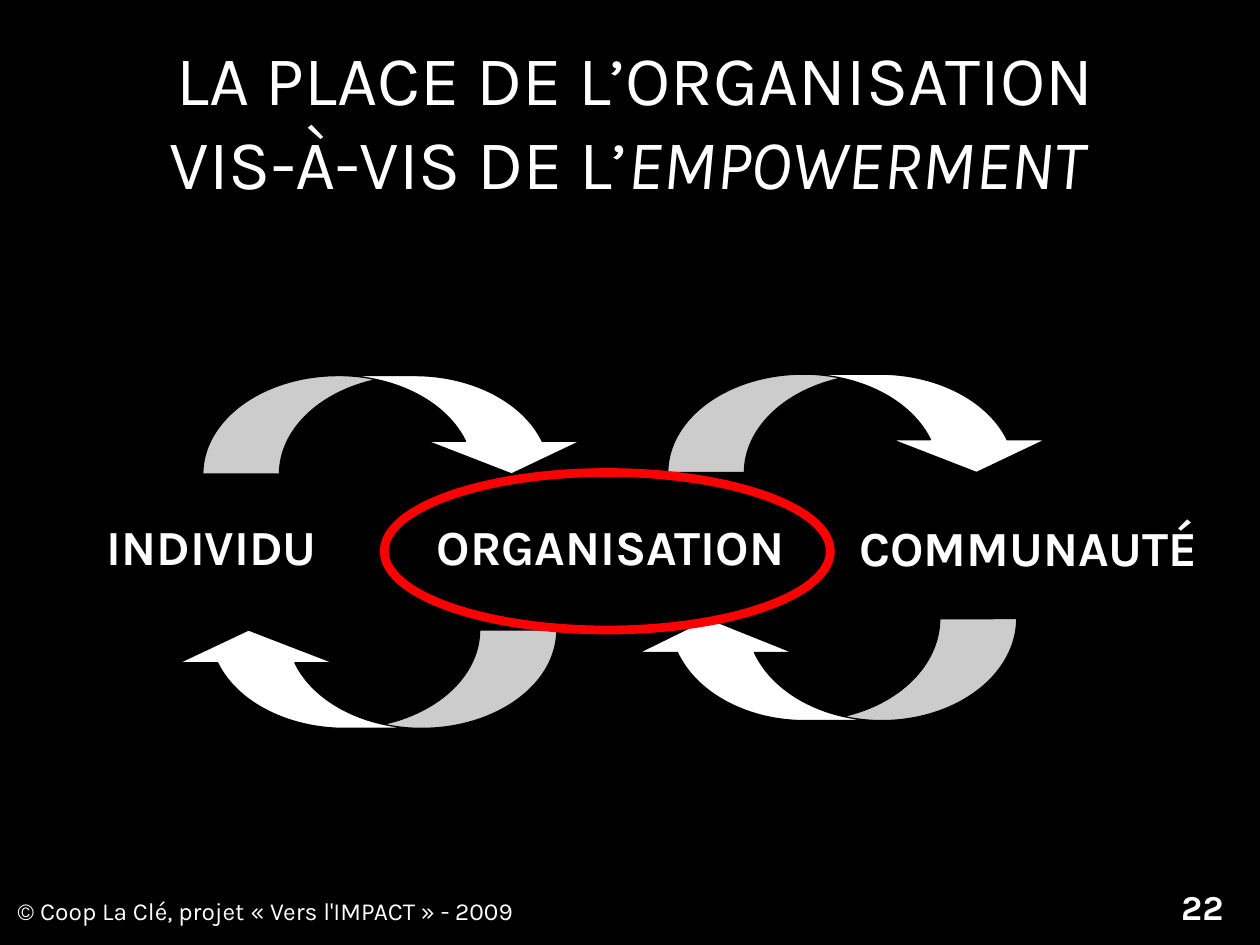
import pptx
import pptx.util
import pptx.dml.color
import pptx.enum.shapes
import pptx.enum.text

Pt = pptx.util.Pt
RGBColor = pptx.dml.color.RGBColor
Shape = pptx.enum.shapes.MSO_SHAPE
Align = pptx.enum.text.PP_ALIGN
Anchor = pptx.enum.text.MSO_ANCHOR
AutoSize = pptx.enum.text.MSO_AUTO_SIZE

BLACK = RGBColor(0x00, 0x00, 0x00)
WHITE = RGBColor(0xFF, 0xFF, 0xFF)
RED = RGBColor(0xFF, 0x00, 0x00)
TITLE_ONLY = 5


class SlideBuilder:
    """Holds the style and the current slide; lengths are in points."""

    font_name = "Karla"

    def __init__(self, deck):
        self.page = deck.slides.add_slide(deck.slide_layouts[TITLE_ONLY])
        fill = self.page.background.fill
        fill.solid()
        fill.fore_color.rgb = BLACK

    def style(self, para, size, align, bold=False):
        para.alignment = align
        para.font.name = self.font_name
        para.font.size = Pt(size)
        para.font.bold = bold
        para.font.color.rgb = WHITE

    def title(self, left, top, width, height, spans):
        box = self.page.shapes.title
        box.left, box.top, box.width, box.height = map(Pt, (left, top, width, height))
        frame = box.text_frame
        frame.auto_size = AutoSize.NONE
        frame.vertical_anchor = Anchor.MIDDLE
        para = frame.paragraphs[0]
        for text, italic in spans:
            span = para.add_run()
            span.text = text
            span.font.italic = italic
        self.style(para, 40, Align.CENTER)

    def text(self, left, top, width, height, text, size, align, bold=False):
        box = self.page.shapes.add_textbox(*map(Pt, (left, top, width, height)))
        frame = box.text_frame
        frame.word_wrap = True
        frame.text = text
        self.style(frame.paragraphs[0], size, align, bold)

    def arrow(self, left, top, width, height, head_width, rotation=0):
        arrow = self.page.shapes.add_shape(
            Shape.CURVED_DOWN_ARROW, *map(Pt, (left, top, width, height)))
        arrow.shadow.inherit = False
        arrow.rotation = rotation
        # The shaft is half as wide as the head
        for index, value in enumerate((head_width / 2, head_width, 0.333)):
            arrow.adjustments[index] = value
        arrow.fill.solid()
        arrow.fill.fore_color.rgb = WHITE
        arrow.line.color.rgb = BLACK
        arrow.line.width = Pt(0.75)

    def ring(self, left, top, width, height):
        ring = self.page.shapes.add_shape(
            Shape.OVAL, *map(Pt, (left, top, width, height)))
        ring.shadow.inherit = False
        ring.fill.background()
        ring.line.color.rgb = RED
        ring.line.width = Pt(5)


def main():
    deck = pptx.Presentation()
    deck.slide_width, deck.slide_height = Pt(720), Pt(540)
    slide = SlideBuilder(deck)

    # Footer and page number
    slide.text(2.9, 508.3, 566.6, 37.4,
               "© Coop La Clé, projet « Vers l'IMPACT » - 2009", 14, Align.LEFT)
    slide.text(649.4, 502.6, 56.9, 37.4, "22", 20, Align.RIGHT, bold=True)

    # Title
    slide.title(59.8, 25.9, 606.2, 84.2,
                [("LA PLACE DE L’ORGANISATION VIS-À-VIS DE L’", False),
                 ("EMPOWERMENT ", True)])

    # Arrows: the upper pair goes right, the lower pair comes back
    for left, top, height, head_width, rotation in (
            (381.6, 213.8, 56.2, 1.56, 0),
            (115.9, 214.6, 56.2, 1.56, 0),
            (97.9, 360, 56.2, 1.57, 180),
            (360.7, 353.5, 58.3, 1.51, 180)):
        slide.arrow(left, top, 220.3, height, head_width, rotation)

    # Ring around the organisation
    slide.ring(219.6, 270, 254.9, 90)

    # Three levels
    for left, top, width, label in (
            (33.8, 291.6, 174.2, "INDIVIDU"),
            (219.6, 291.6, 258.5, "ORGANISATION"),
            (466.6, 292.3, 241.9, "COMMUNAUTÉ")):
        slide.text(left, top, width, 41, label, 28, Align.CENTER, bold=True)

    deck.save("out.pptx")


if __name__ == "__main__":
    main()
